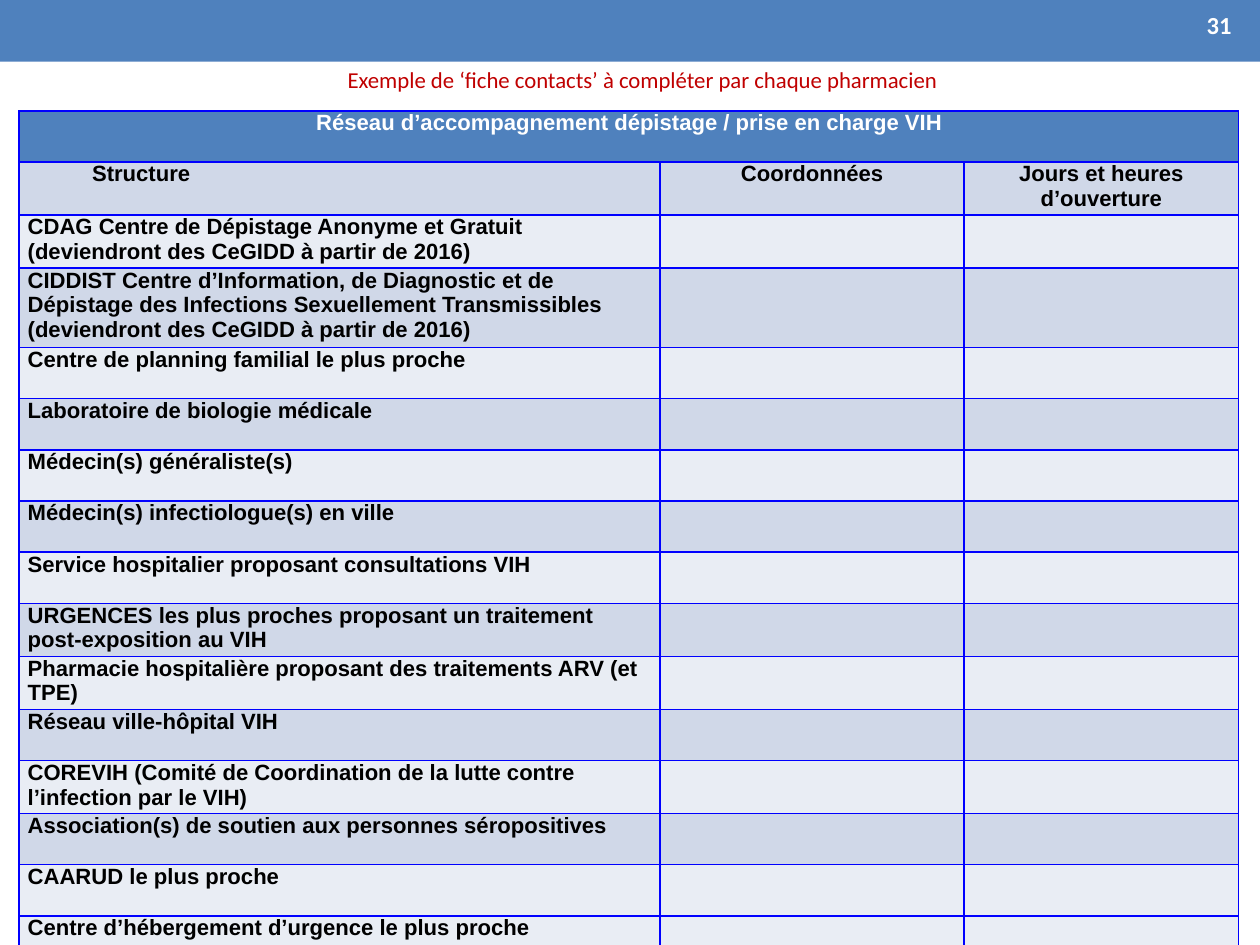
from dataclasses import dataclass

import pptx
import pptx.dml.color
import pptx.enum.shapes
import pptx.enum.text
import pptx.oxml.ns
import pptx.util
from lxml import etree
from pptx.util import Inches


@dataclass(frozen=True)
class Theme:
    blue: str = "4F81BD"
    band_dark: str = "D0D8E8"
    band_light: str = "E9EDF4"
    border: str = "0000FF"
    white: str = "FFFFFF"
    black: str = "000000"
    red: str = "C00000"
    number_size: float = 14
    title_size: float = 13
    table_size: float = 12.6
    border_width: float = 1


theme = Theme()
qn = pptx.oxml.ns.qn
CENTER = pptx.enum.text.PP_ALIGN.CENTER
RIGHT = pptx.enum.text.PP_ALIGN.RIGHT


def add_run(paragraph, text, font_name, size, color, bold=False):
    run = paragraph.add_run()
    run.text = text
    run.font.name = font_name
    run.font.size = pptx.util.Pt(size)
    run.font.bold = bold
    run.font.color.rgb = pptx.dml.color.RGBColor.from_string(color)


def style_cell(cell, fill):
    """Set the margins, the border on all four sides and the fill."""
    cell.margin_left = cell.margin_right = Inches(0.07)
    cell.margin_top = cell.margin_bottom = 0
    properties = cell._tc.get_or_add_tcPr()
    for side in ("a:lnL", "a:lnR", "a:lnT", "a:lnB"):
        line = etree.SubElement(properties, qn(side), w=str(pptx.util.Pt(theme.border_width)))
        solid = etree.SubElement(line, qn("a:solidFill"))
        etree.SubElement(solid, qn("a:srgbClr"), val=theme.border)
    cell.fill.solid()
    cell.fill.fore_color.rgb = pptx.dml.color.RGBColor.from_string(fill)


presentation = pptx.Presentation()
presentation.slide_width = Inches(10)
presentation.slide_height = Inches(7.5)
slide = presentation.slides.add_slide(presentation.slide_layouts[6])

# Header band
band = slide.shapes.add_shape(
    pptx.enum.shapes.MSO_SHAPE.RECTANGLE, 0, 0, Inches(10), Inches(0.49))
band.shadow.inherit = False
band.fill.solid()
band.fill.fore_color.rgb = pptx.dml.color.RGBColor.from_string(theme.blue)
band.line.fill.background()

# Slide number and title
labels = [
    ((9.35, 0.02, 0.65, 0.36), "31", theme.number_size, theme.white, True),
    ((1.24, 0.47, 7.71, 0.32),
     "Exemple de ‘fiche contacts’ à compléter par chaque pharmacien",
     theme.title_size, theme.red, False),
]
for place, text, size, color, bold in labels:
    box = slide.shapes.add_textbox(*map(Inches, place))
    box.text_frame.word_wrap = True
    box.text_frame.vertical_anchor = pptx.enum.text.MSO_ANCHOR.MIDDLE
    paragraph = box.text_frame.paragraphs[0]
    paragraph.alignment = CENTER
    add_run(paragraph, text, "Calibri", size, color, bold)

# Contact table
heading = "Réseau d’accompagnement dépistage / prise en charge VIH"
column_titles = ["\tStructure\t", "Coordonnées", "Jours et heures d’ouverture"]
structures = [
    "CDAG Centre de Dépistage Anonyme et Gratuit (deviendront des CeGIDD à partir de 2016)",
    "CIDDIST Centre d’Information, de Diagnostic et de Dépistage des Infections "
    "Sexuellement Transmissibles\n(deviendront des CeGIDD à partir de 2016)",
    "Centre de planning familial le plus proche",
    "Laboratoire de biologie médicale",
    "Médecin(s) généraliste(s)",
    "Médecin(s) infectiologue(s) en ville",
    "Service hospitalier proposant consultations VIH",
    "URGENCES les plus proches proposant un traitement post-exposition au VIH",
    "Pharmacie hospitalière proposant des traitements ARV (et TPE)",
    "Réseau ville-hôpital VIH",
    "COREVIH (Comité de Coordination de la lutte contre l’infection par le VIH)",
    "Association(s) de soutien aux personnes séropositives",
    "CAARUD le plus proche",
    "Centre d’hébergement d’urgence le plus proche",
]
rows = [[heading, "", ""], column_titles] + [[name, "", ""] for name in structures]
row_height = Inches(6.5 / len(rows))
table = slide.shapes.add_table(
    len(rows), 3, Inches(0.15), Inches(0.88), Inches(9.68), row_height * len(rows)).table
for column, width in zip(table.columns, (5.09, 2.41, 2.18)):
    column.width = Inches(width)

last_row = len(rows) - 1
for row_index, texts in enumerate(rows):
    table.rows[row_index].height = row_height
    if row_index == 0:
        fill, color = theme.blue, theme.white
    else:
        is_dark = row_index % 2 == 1 and row_index != last_row
        fill, color = (theme.band_dark if is_dark else theme.band_light), theme.black
    for column_index, text in enumerate(texts):
        cell = table.cell(row_index, column_index)
        style_cell(cell, fill)
        for line_index, line_text in enumerate(text.split("\n")):
            frame = cell.text_frame
            paragraph = frame.add_paragraph() if line_index else frame.paragraphs[0]
            if row_index == 0 or column_index > 0:
                paragraph.alignment = CENTER
            if "\t" in line_text:
                tabs = etree.SubElement(paragraph._p.get_or_add_pPr(), qn("a:tabLst"))
                for position, alignment in ((0.9, "ctr"), (1.8, "r")):
                    etree.SubElement(tabs, qn("a:tab"), pos=str(Inches(position)), algn=alignment)
            if line_text:
                add_run(paragraph, line_text, "Arial", theme.table_size, color, True)
            else:
                paragraph.font.size = pptx.util.Pt(theme.table_size)
table.cell(0, 0).merge(table.cell(0, 2))

presentation.save("out.pptx")
